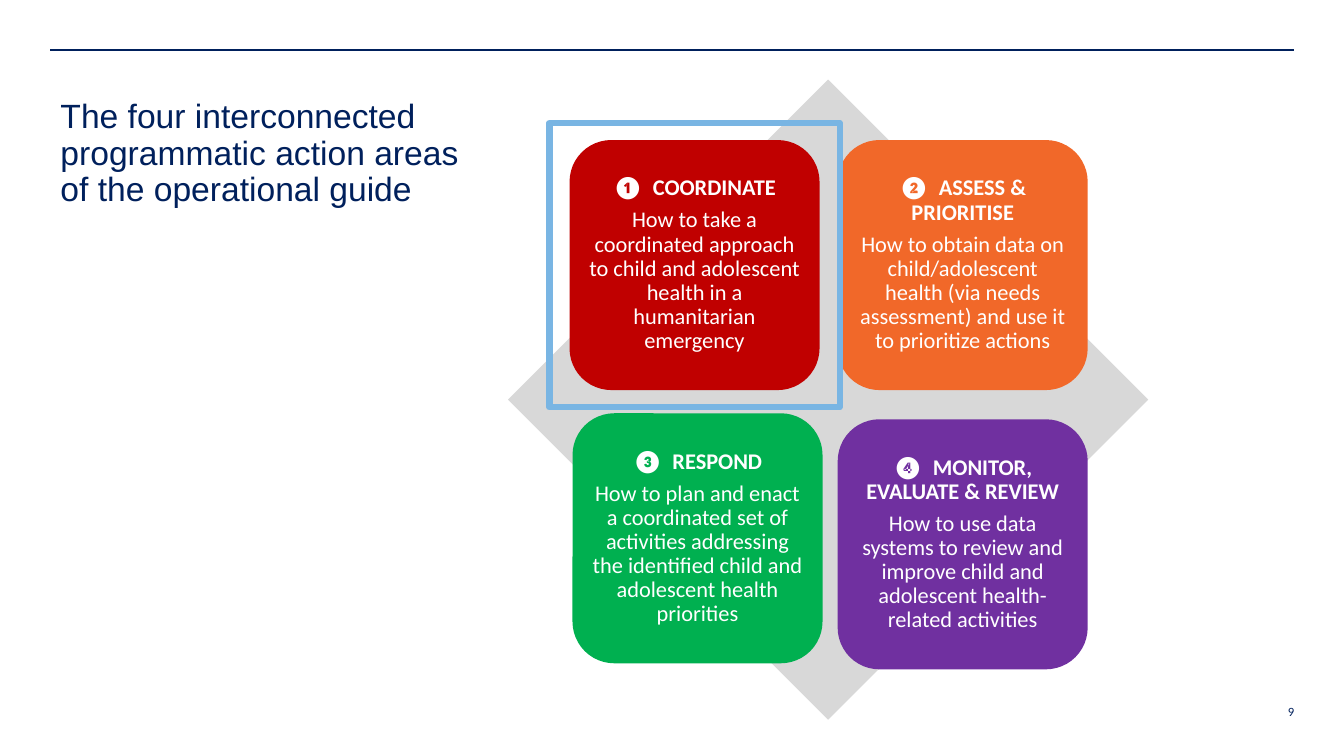
from dataclasses import dataclass

from lxml import etree
from pptx import Presentation
from pptx.dml.color import RGBColor
from pptx.enum.shapes import MSO_CONNECTOR, MSO_SHAPE
from pptx.enum.text import MSO_ANCHOR, MSO_AUTO_SIZE, PP_ALIGN
from pptx.oxml.ns import qn
from pptx.util import Inches, Pt

DIAMOND, ROUNDED, RECTANGLE = MSO_SHAPE.DIAMOND, MSO_SHAPE.ROUNDED_RECTANGLE, MSO_SHAPE.RECTANGLE
LEFT, CENTER, RIGHT = PP_ALIGN.LEFT, PP_ALIGN.CENTER, PP_ALIGN.RIGHT
TOP, MIDDLE = MSO_ANCHOR.TOP, MSO_ANCHOR.MIDDLE


@dataclass(frozen=True)
class Theme:
    navy: RGBColor = RGBColor.from_string("00205C")
    white: RGBColor = RGBColor.from_string("FFFFFF")
    gray: RGBColor = RGBColor.from_string("D8D8D8")
    highlight: RGBColor = RGBColor.from_string("79B5E3")
    red: RGBColor = RGBColor.from_string("C00000")
    orange: RGBColor = RGBColor.from_string("F16829")
    green: RGBColor = RGBColor.from_string("00B050")
    purple: RGBColor = RGBColor.from_string("7030A0")
    title_font: str = "Arial"
    body_font: str = "Calibri"
    title_size: Pt = Pt(24)
    card_size: Pt = Pt(16)
    number_size: Pt = Pt(9)


theme = Theme()
presentation = Presentation()
presentation.slide_width, presentation.slide_height = Inches(13.33), Inches(7.5)
TITLE_ONLY = presentation.slide_layouts[5]
slide = presentation.slides.add_slide(TITLE_ONLY)


def area(left, top, width, height):
    """Turn percentages of the slide's width and height into lengths."""
    across, down = presentation.slide_width / 100, presentation.slide_height / 100
    return round(left * across), round(top * down), round(width * across), round(height * down)


def write(shape, lines, font, size, color, alignment, anchor, inset):
    """Fill a shape with one paragraph per (text, bold) pair."""
    frame = shape.text_frame
    frame.word_wrap = True
    frame.auto_size = MSO_AUTO_SIZE.NONE
    frame.vertical_anchor = anchor
    frame.margin_left = frame.margin_right = frame.margin_top = frame.margin_bottom = Inches(inset)
    for index, (text, bold) in enumerate(lines):
        paragraph = frame.add_paragraph() if index else frame.paragraphs[0]
        paragraph.alignment = alignment
        paragraph.line_spacing = 0.9
        paragraph.space_before = Pt(5.6 if index else 0)
        run = paragraph.add_run()
        run.text = text
        run.font.name, run.font.size, run.font.bold = font, size, bold
        run.font.color.rgb = color


# Header rule and title
left, top, width, _ = area(3.75, 6.67, 92.5, 0)
rule = slide.shapes.add_connector(MSO_CONNECTOR.STRAIGHT, left, top, left + width, top)
rule.line.color.rgb = theme.navy
rule.line.width = Pt(1.5)
etree.SubElement(rule._element.spPr, qn("a:effectLst"))

title = slide.shapes.title
title.left, title.top, title.width, title.height = area(3.75, 11.87, 32.25, 17.2)
write(title, [("The four interconnected programmatic action areas of the operational guide", False)],
      theme.title_font, theme.title_size, theme.navy, LEFT, TOP, 0.1)

# Diamond behind the cards
diamond = slide.shapes.add_shape(DIAMOND, *area(37.8, 10.53, 47.63, 84.67))
diamond.shadow.inherit = False
diamond.fill.solid()
diamond.fill.fore_color.rgb = theme.gray
diamond.line.fill.background()

# Action area cards
cards = [
    (42.38, 18.53, theme.red, "❶  COORDINATE",
     "How to take a coordinated approach to child and adolescent health in a humanitarian emergency"),
    (62.33, 18.53, theme.orange, "❷  ASSESS & PRIORITISE",
     "How to obtain data on child/adolescent health (via needs assessment) and use it to prioritize actions"),
    (42.6, 54.67, theme.green, "❸  RESPOND",
     "How to plan and enact a coordinated set of activities addressing the identified child and "
     "adolescent health priorities"),
    (62.33, 55.47, theme.purple, "❹  MONITOR, EVALUATE & REVIEW",
     "How to use data systems to review and improve child and adolescent health-related activities"),
]
for left, top, color, heading, description in cards:
    card = slide.shapes.add_shape(ROUNDED, *area(left, top, 18.6, 33.07))
    card.adjustments[0] = 0.167
    card.shadow.inherit = False
    card.fill.solid()
    card.fill.fore_color.rgb = color
    card.line.fill.background()
    write(card, [(heading, True), (description, False)],
          theme.body_font, theme.card_size, theme.white, CENTER, MIDDLE, 0.07)

# Frame around the first card
highlight = slide.shapes.add_shape(RECTANGLE, *area(40.88, 16.27, 21.6, 37.6))
highlight.shadow.inherit = False
highlight.fill.background()
highlight.line.color.rgb = theme.highlight
highlight.line.width = Pt(4.5)

# Page number
page_number = slide.shapes.add_textbox(*area(93.15, 93.33, 3.15, 4.67))
write(page_number, [("9", False)], theme.body_font, theme.number_size, theme.navy, RIGHT, TOP, 0)

presentation.save("out.pptx")
